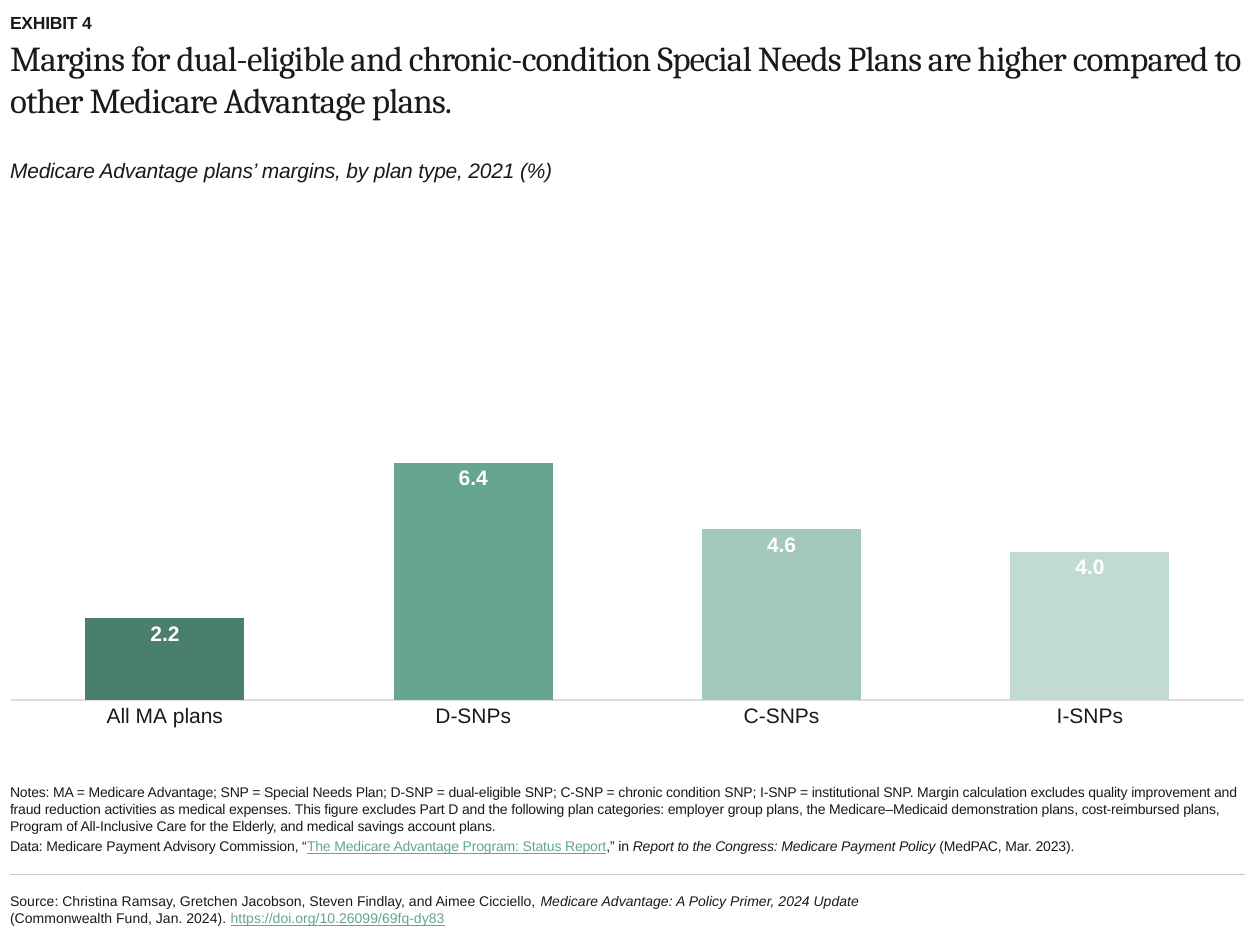
from lxml import etree
from pptx import Presentation
from pptx import util as u
from pptx.chart import data as chart_data
from pptx.dml.color import RGBColor
from pptx.enum import chart as ch, shapes, text
from pptx.oxml import ns, parse_xml

INK = RGBColor(0x1A, 0x1A, 0x1A)
WHITE = RGBColor(0xFF, 0xFF, 0xFF)
RULE = RGBColor(0xC6, 0xC6, 0xC6)
AXIS = RGBColor(0xDD, 0xDD, 0xDD)
LINK = RGBColor(0x65, 0xA5, 0x91)
BARS = [RGBColor(0x4A, 0x7E, 0x6E), LINK,
        RGBColor(0xA3, 0xC9, 0xBD), RGBColor(0xC1, 0xDB, 0xD3)]

deck = Presentation()
deck.slide_width, deck.slide_height = u.Inches(10), u.Inches(7.5)
COL, ROW = deck.slide_width / 100, deck.slide_height / 100
LEFT, FULL = 0.8, 98
slide = deck.slides.add_slide(deck.slide_layouts[5])


def place(col, row, cols, rows):
    return [int(n) for n in (col * COL, row * ROW, cols * COL, rows * ROW)]


def write(box, paragraphs, size, font="Arial", spacing=0, anchor=text.MSO_ANCHOR.TOP, after=0):
    frame = box.text_frame
    frame.word_wrap = True
    frame.auto_size = text.MSO_AUTO_SIZE.NONE
    frame.vertical_anchor = anchor
    frame.margin_left = frame.margin_right = frame.margin_top = frame.margin_bottom = 0
    for number, pieces in enumerate(paragraphs):
        para = frame.add_paragraph() if number else frame.paragraphs[0]
        para.alignment = text.PP_ALIGN.LEFT
        para.space_after = u.Pt(after)
        for words, style in pieces:
            run = para.add_run()
            run.text = words
            run.font.name, run.font.size = font, u.Pt(size)
            run.font.bold = style == "bold"
            run.font.italic = style == "italic"
            run.font.underline = style == "link"
            run.font.color.rgb = LINK if style == "link" else INK
            run.font._element.set("spc", str(spacing))


headline = slide.shapes.title
headline.left, headline.top, headline.width, headline.height = place(LEFT, 3.87, FULL, 11.07)
write(headline, [[("Margins for dual-eligible and chronic-condition Special Needs Plans are higher "
                   "compared to other Medicare Advantage plans.", "")]],
      20, font="Cambria", spacing=-50)

exhibit = slide.shapes.add_textbox(*place(LEFT, 0.67, FULL, 2.8))
write(exhibit, [[("EXHIBIT 4", "bold")]], 10, spacing=-10, anchor=text.MSO_ANCHOR.BOTTOM)

margins = chart_data.CategoryChartData(number_format="0.0")
margins.categories = ["All MA plans", "D-SNPs", "C-SNPs", "I-SNPs"]
margins.add_series("Series 1", [2.2, 6.4, 4.6, 4.0])
chart = slide.shapes.add_chart(ch.XL_CHART_TYPE.COLUMN_CLUSTERED,
                               *place(LEFT, 15.2, FULL, 66.53), margins).chart
chart.has_legend = chart.has_title = False
chart.font.name, chart.font.size = "Arial", u.Pt(10)
chart.font.color.rgb = INK

plan_axis = chart.category_axis
plan_axis.major_tick_mark = plan_axis.minor_tick_mark = ch.XL_TICK_MARK.NONE
plan_axis.format.line.color.rgb = AXIS
plan_axis.format.line.width = u.Pt(0.75)
plan_axis.tick_labels.font.name = "Arial"
plan_axis.tick_labels.font.size = u.Pt(12)
plan_axis.tick_labels.font.color.rgb = INK

percent_axis = chart.value_axis
percent_axis.minimum_scale, percent_axis.maximum_scale = 0, 15
percent_axis.major_unit = 5
percent_axis.has_major_gridlines = False
percent_axis.visible = False

columns = chart.plots[0]
columns.gap_width, columns.overlap = 94, -27
columns.vary_by_categories = False
margin_series = columns.series[0]
margin_series.invert_if_negative = False
for number, color in enumerate(BARS):
    fill = margin_series.points[number].format.fill
    fill.solid()
    fill.fore_color.rgb = color

labels = margin_series.data_labels
labels.show_value = True
labels.position = ch.XL_LABEL_POSITION.INSIDE_END
labels.number_format, labels.number_format_is_linked = "#,##0.0", False
labels.font.name, labels.font.size, labels.font.bold = "Arial", u.Pt(12), True
labels.font.color.rgb = WHITE

plot_area = chart._chartSpace.find(".//" + ns.qn("c:plotArea"))
for automatic in plot_area.findall(ns.qn("c:layout")):
    plot_area.remove(automatic)
plot_area.insert(0, parse_xml(
    f'<c:layout {ns.nsdecls("c")}><c:manualLayout><c:layoutTarget val="inner"/>'
    '<c:xMode val="edge"/><c:yMode val="edge"/><c:x val="0"/><c:y val="0"/>'
    '<c:w val="1"/><c:h val="0.885"/></c:manualLayout></c:layout>'))

subtitle = slide.shapes.add_textbox(*place(LEFT, 16.67, FULL, 3.33))
write(subtitle, [[("Medicare Advantage plans’ margins, by plan type, 2021 (%)", "italic")]],
      12, spacing=-10)

notes = slide.shapes.add_textbox(*place(LEFT, 83.73, FULL, 6.67))
write(notes, [
    [("Notes: MA = Medicare Advantage; SNP = Special Needs Plan; D-SNP = dual-eligible SNP; "
      "C-SNP = chronic condition SNP; I-SNP = institutional SNP. Margin calculation excludes "
      "quality improvement and fraud reduction activities as medical expenses. This figure "
      "excludes Part D and the following plan categories: employer group plans, the "
      "Medicare–Medicaid demonstration plans, cost-reimbursed plans, Program of All-Inclusive "
      "Care for the Elderly, and medical savings account plans.", "")],
    [("Data: Medicare Payment Advisory Commission, “", ""),
     ("The Medicare Advantage Program: Status Report", "link"),
     (",” in ", ""),
     ("Report to the Congress: Medicare Payment Policy", "italic"),
     (" (MedPAC, Mar. 2023).", "")],
], 8, spacing=-10, anchor=text.MSO_ANCHOR.BOTTOM, after=2)

left, top, width, _ = place(LEFT, 92.53, FULL, 0)
rule = slide.shapes.add_connector(shapes.MSO_CONNECTOR.STRAIGHT, left, top, left + width, top)
rule.line.color.rgb = RULE
rule.line.width = u.Pt(0.75)
etree.SubElement(rule._element.spPr, ns.qn("a:effectLst"))

source = slide.shapes.add_textbox(*place(LEFT, 93.2, 68.8, 6.13))
write(source, [[
    ("Source: Christina Ramsay, Gretchen Jacobson, Steven Findlay, and Aimee Cicciello, ", ""),
    ("Medicare Advantage: A Policy Primer, 2024 Update ", "italic"),
    ("(Commonwealth Fund, Jan. 2024). ", ""),
    ("https://doi.org/10.26099/69fq-dy83", "link"),
]], 8, anchor=text.MSO_ANCHOR.MIDDLE)

deck.save("out.pptx")
